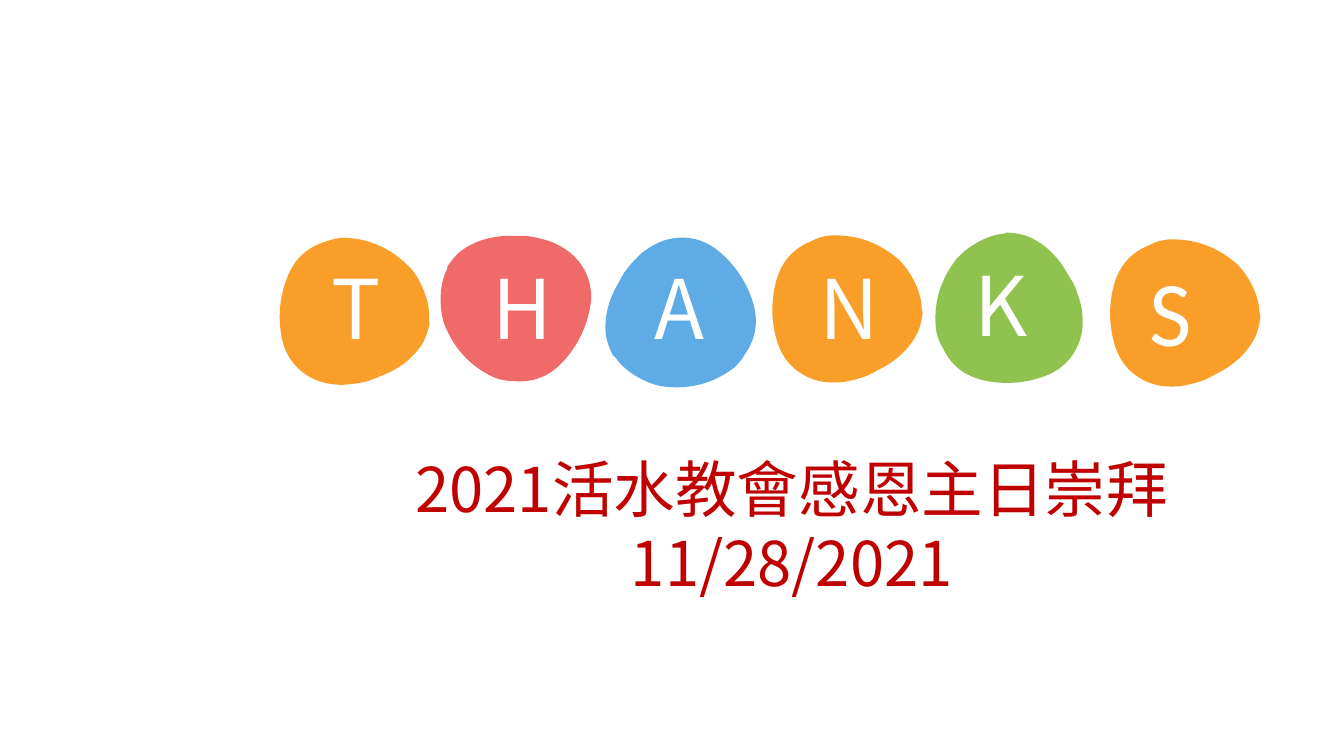
from lxml import etree
from pptx import Presentation
from pptx.dml.color import RGBColor
from pptx.enum import text
from pptx.oxml import ns
from pptx.util import Inches, Pt

ORANGE = RGBColor(0xF8, 0x9E, 0x29)
CORAL = RGBColor(0xF0, 0x6A, 0x6A)
BLUE = RGBColor(0x5E, 0xAB, 0xE6)
GREEN = RGBColor(0x90, 0xC2, 0x50)
WHITE = RGBColor(0xFF, 0xFF, 0xFF)
DARK_RED = RGBColor(0xC0, 0x00, 0x00)
FONT = "Noto Sans CJK SC"

# Pebble outline in hundredths of an inch: a start point, then cubic curves
PEBBLE_SIZE = (152, 146)
PEBBLE_START = (135, 23)
PEBBLE_CURVES = [
    [(128, 15), (119, 10), (110, 6)],
    [(101, 3), (93, 1), (84, 0)],
    [(81, 0), (78, 0), (74, 0)],
    [(72, 0), (70, 0), (67, 0)],
    [(61, 0), (53, 1), (45, 3)],
    [(31, 7), (20, 14), (15, 20)],
    [(12, 23), (10, 26), (7, 30)],
    [(7, 32), (6, 33), (6, 34)],
    [(2, 42), (0, 52), (0, 63)],
    [(0, 75), (2, 85), (6, 93)],
    [(15, 113), (29, 128), (48, 138)],
    [(55, 142), (63, 144), (72, 144)],
    [(81, 145), (90, 144), (98, 141)],
    [(109, 137), (117, 130), (124, 122)],
    [(135, 109), (143, 94), (147, 77)],
    [(152, 58), (149, 39), (135, 23)],
]

# Letter, pebble left, top, rotation, colour; letter left, top, width, height, size, font
LETTERS = [
    ("T", 2.7, 2.34, 158.4, ORANGE, 3.19, 2.5, 0.92, 1.09, 58.7, FONT),
    ("H", 4.37, 2.34, 0, CORAL, 4.79, 2.5, 0.92, 1.09, 58.7, FONT),
    ("A", 6.03, 2.4, 299.2, BLUE, 6.39, 2.5, 0.92, 1.09, 58.7, FONT),
    ("N", 7.58, 2.31, 152.1, ORANGE, 8.03, 2.5, 0.92, 1.09, 58.7, FONT),
    ("K", 9.22, 2.39, 58.8, GREEN, 9.57, 2.47, 0.92, 1.09, 58.7, FONT),
    ("S", 10.93, 2.35, 152.1, ORANGE, 11.3, 2.47, 0.95, 1.21, 66, "Calibri"),
]


def add_pebble(slide, left, top, rotation, colour):
    builder = slide.shapes.build_freeform(0, 0, scale=Inches(1) / 100)
    builder.add_line_segments([PEBBLE_SIZE])
    shape = builder.convert_to_shape(Inches(left), Inches(top))
    # Swap the straight segment for the curved outline
    outline = shape._element.find(".//" + ns.qn("a:path"))
    for child in list(outline):
        outline.remove(child)
    outline.set("w", str(PEBBLE_SIZE[0]))
    outline.set("h", str(PEBBLE_SIZE[1]))
    steps = [("a:moveTo", [PEBBLE_START])]
    steps += [("a:cubicBezTo", curve) for curve in PEBBLE_CURVES]
    for tag, points in steps:
        step = etree.SubElement(outline, ns.qn(tag))
        for x, y in points:
            etree.SubElement(step, ns.qn("a:pt"), x=str(x), y=str(y))
    etree.SubElement(outline, ns.qn("a:close"))
    shape.rotation = rotation
    shape.shadow.inherit = False
    shape.fill.solid()
    shape.fill.fore_color.rgb = colour
    shape.line.fill.background()


def add_run(paragraph, words, size, font, colour):
    run = paragraph.add_run()
    run.text = words
    run.font.size = Pt(size)
    run.font.name = font
    run.font.color.rgb = colour
    etree.SubElement(run._r.get_or_add_rPr(), ns.qn("a:ea"), typeface=font)


presentation = Presentation()
presentation.slide_width = Inches(13.33)
presentation.slide_height = Inches(7.5)
slide = presentation.slides.add_slide(presentation.slide_layouts[5])

# Title and date
title = slide.shapes.title
title.left, title.top = Inches(3.46), Inches(4.42)
title.width, title.height = Inches(8.79), Inches(1.58)
frame = title.text_frame
frame.word_wrap = True
frame.auto_size = text.MSO_AUTO_SIZE.SHAPE_TO_FIT_TEXT
frame.vertical_anchor = text.MSO_ANCHOR.TOP
for index, words in enumerate(["2021活水教會感恩主日崇拜", "11/28/2021"]):
    paragraph = frame.add_paragraph() if index else frame.paragraphs[0]
    paragraph.alignment = text.PP_ALIGN.CENTER
    add_run(paragraph, words, 44, FONT, DARK_RED)

# Pebbles with the letters of THANKS
for letter, left, top, rotation, colour, *box, size, font in LETTERS:
    add_pebble(slide, left, top, rotation, colour)
    textbox = slide.shapes.add_textbox(*[Inches(length) for length in box])
    textbox.text_frame.word_wrap = True
    textbox.text_frame.auto_size = text.MSO_AUTO_SIZE.SHAPE_TO_FIT_TEXT
    add_run(textbox.text_frame.paragraphs[0], letter, size, font, WHITE)

presentation.save("out.pptx")
